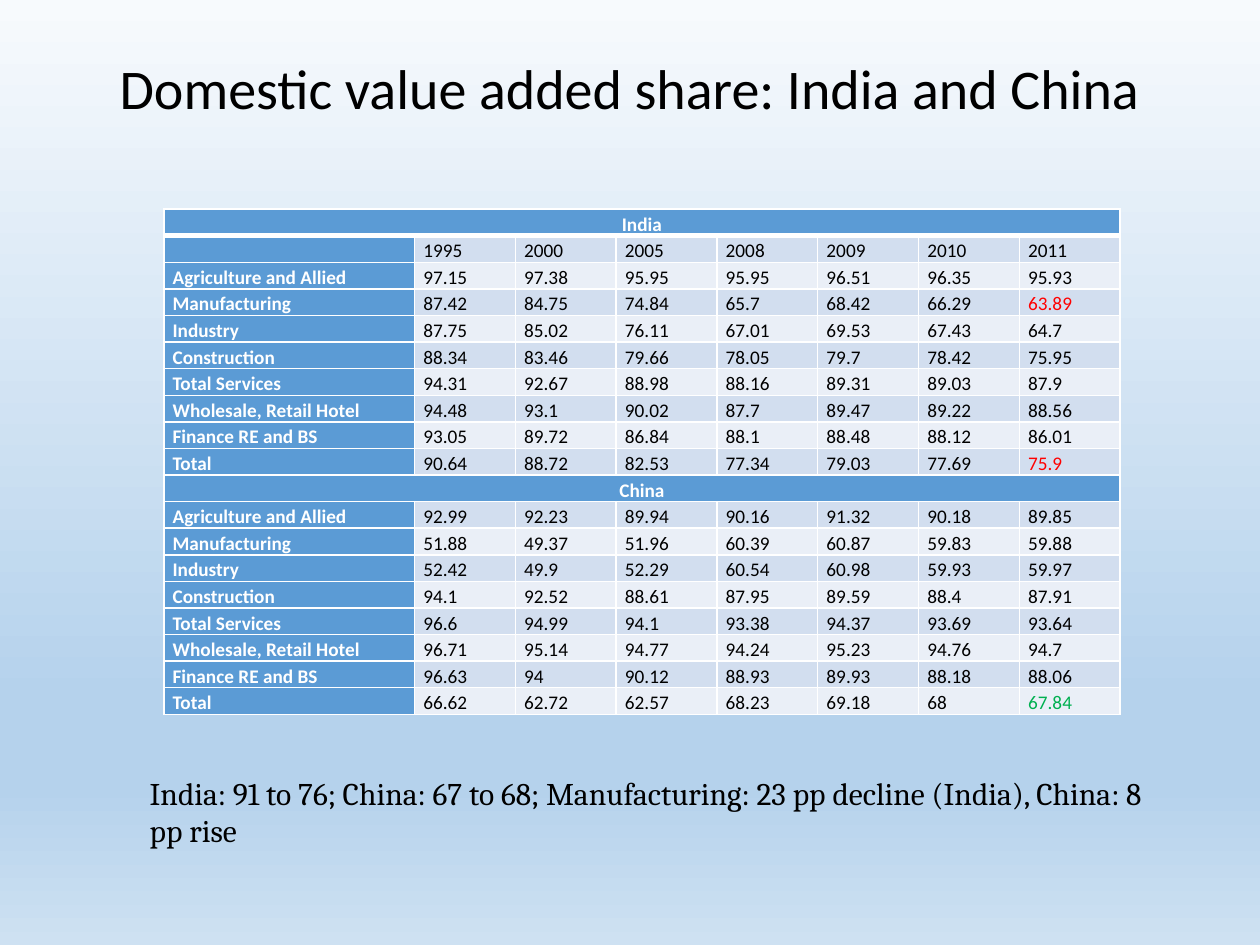
from lxml.etree import SubElement
from pptx import Presentation
from pptx.dml.color import RGBColor
from pptx.enum.text import MSO_ANCHOR, PP_ALIGN
from pptx.oxml.ns import qn
from pptx.util import Inches, Pt

TITLE = "Domestic value added share: India and China"
SUMMARY = ("India: 91 to 76; China: 67 to 68; Manufacturing: "
           "23 pp decline (India), China: 8 pp rise")

SECTORS = ["Agriculture and Allied", "Manufacturing", "Industry", "Construction",
           "Total Services", "Wholesale, Retail Hotel", "Finance RE and BS", "Total"]
YEARS = "1995 2000 2005 2008 2009 2010 2011"
INDIA = [
    "97.15 97.38 95.95 95.95 96.51 96.35 95.93",
    "87.42 84.75 74.84 65.7 68.42 66.29 63.89",
    "87.75 85.02 76.11 67.01 69.53 67.43 64.7",
    "88.34 83.46 79.66 78.05 79.7 78.42 75.95",
    "94.31 92.67 88.98 88.16 89.31 89.03 87.9",
    "94.48 93.1 90.02 87.7 89.47 89.22 88.56",
    "93.05 89.72 86.84 88.1 88.48 88.12 86.01",
    "90.64 88.72 82.53 77.34 79.03 77.69 75.9",
]
CHINA = [
    "92.99 92.23 89.94 90.16 91.32 90.18 89.85",
    "51.88 49.37 51.96 60.39 60.87 59.83 59.88",
    "52.42 49.9 52.29 60.54 60.98 59.93 59.97",
    "94.1 92.52 88.61 87.95 89.59 88.4 87.91",
    "96.6 94.99 94.1 93.38 94.37 93.69 93.64",
    "96.71 95.14 94.77 94.24 95.23 94.76 94.7",
    "96.63 94 90.12 88.93 89.93 88.18 88.06",
    "66.62 62.72 62.57 68.23 69.18 68 67.84",
]


def sector_rows(country):
    return [[sector, *values.split()] for sector, values in zip(SECTORS, country)]


# A row with a single entry is a country heading across the whole table
ROWS = [["India"], ["", *YEARS.split()], *sector_rows(INDIA),
        ["China"], *sector_rows(CHINA)]
HIGHLIGHTS = {(3, 7): "FF0000", (9, 7): "FF0000", (18, 7): "00B050"}

BACKGROUND = [(0, "F7FAFD"), (74, "B5D2EC"), (83, "B5D2EC"), (100, "CEE1F2")]
HEADER, BANDS = "5B9BD5", ("EAEFF7", "D2DEEF")
WHITE, BLACK = "FFFFFF", "000000"
COLUMN_WIDTHS = [1.99] + [0.8] * 7
ROW_HEIGHT = 0.21
TABLE_LEFT, TABLE_TOP = 1.3, 1.66


def rgb(value):
    return RGBColor.from_string(value)


def add_run(paragraph, text, size, font, color, bold=False):
    run = paragraph.add_run()
    run.text = text
    run.font.size, run.font.name, run.font.bold = Pt(size), font, bold
    run.font.color.rgb = rgb(color)


def add_text(slide, box, text, size, font, align, anchor, spacing):
    frame = slide.shapes.add_textbox(*map(Inches, box)).text_frame
    frame.word_wrap = True
    frame.vertical_anchor = anchor
    paragraph = frame.paragraphs[0]
    paragraph.alignment, paragraph.line_spacing = align, spacing
    add_run(paragraph, text, size, font, BLACK)


def set_background(slide):
    slide.background.fill.gradient()
    gradient = slide.element.find(".//" + qn("a:gradFill"))
    stops = gradient.find(qn("a:gsLst"))
    for stop in list(stops):
        stops.remove(stop)
    for position, color in BACKGROUND:
        stop = SubElement(stops, qn("a:gs"), pos=str(position * 1000))
        SubElement(stop, qn("a:srgbClr"), val=color)
    gradient.find(qn("a:lin")).set("ang", "5400000")


def set_borders(cell, row):
    # A thicker line separates the first row from the rest
    widths = {"L": 1, "R": 1, "T": 3 if row == 1 else 1, "B": 3 if row == 0 else 1}
    properties = cell._tc.get_or_add_tcPr()
    for side, width in widths.items():
        line = SubElement(properties, qn("a:ln" + side), w=str(Pt(width)))
        fill = SubElement(line, qn("a:solidFill"))
        SubElement(fill, qn("a:srgbClr"), val=WHITE)


def fill_cell(cell, row, column, text, heading):
    header = heading or column == 0
    set_borders(cell, row)
    cell.fill.solid()
    cell.fill.fore_color.rgb = rgb(HEADER if header else BANDS[row % 2])
    cell.margin_left = cell.margin_right = Inches(0.07)
    cell.margin_top = cell.margin_bottom = 0
    paragraph = cell.text_frame.paragraphs[0]
    paragraph.line_spacing = 1.15
    paragraph.alignment = PP_ALIGN.CENTER if heading else PP_ALIGN.LEFT
    if text:
        color = WHITE if header else HIGHLIGHTS.get((row, column), BLACK)
        add_run(paragraph, text, 11, "Calibri", color, header)
    else:
        SubElement(paragraph._p, qn("a:endParaRPr"), sz="1100")


def add_value_table(slide):
    columns = len(COLUMN_WIDTHS)
    table = slide.shapes.add_table(
        len(ROWS), columns, Inches(TABLE_LEFT), Inches(TABLE_TOP),
        Inches(sum(COLUMN_WIDTHS)), Inches(ROW_HEIGHT * len(ROWS))).table
    for column, width in zip(table.columns, COLUMN_WIDTHS):
        column.width = Inches(width)
    for row, entries in enumerate(ROWS):
        table.rows[row].height = Inches(ROW_HEIGHT)
        heading = len(entries) == 1
        if heading:
            table.cell(row, 0).merge(table.cell(row, columns - 1))
        for column in range(columns):
            text = entries[column] if column < len(entries) else ""
            fill_cell(table.cell(row, column), row, column, text, heading)


def main():
    presentation = Presentation()
    presentation.slide_width, presentation.slide_height = Inches(10), Inches(7.5)
    slide = presentation.slides.add_slide(presentation.slide_layouts[6])
    set_background(slide)
    # Title, table and summary line
    add_text(slide, (0.5, 0.3, 9, 0.85), TITLE, 32, "Calibri",
             PP_ALIGN.CENTER, MSO_ANCHOR.MIDDLE, 0.9)
    add_value_table(slide)
    add_text(slide, (1.09, 6.09, 8.2, 0.71), SUMMARY, 18, "Cambria",
             PP_ALIGN.LEFT, MSO_ANCHOR.TOP, 1.0)
    presentation.save("out.pptx")


if __name__ == "__main__":
    main()
